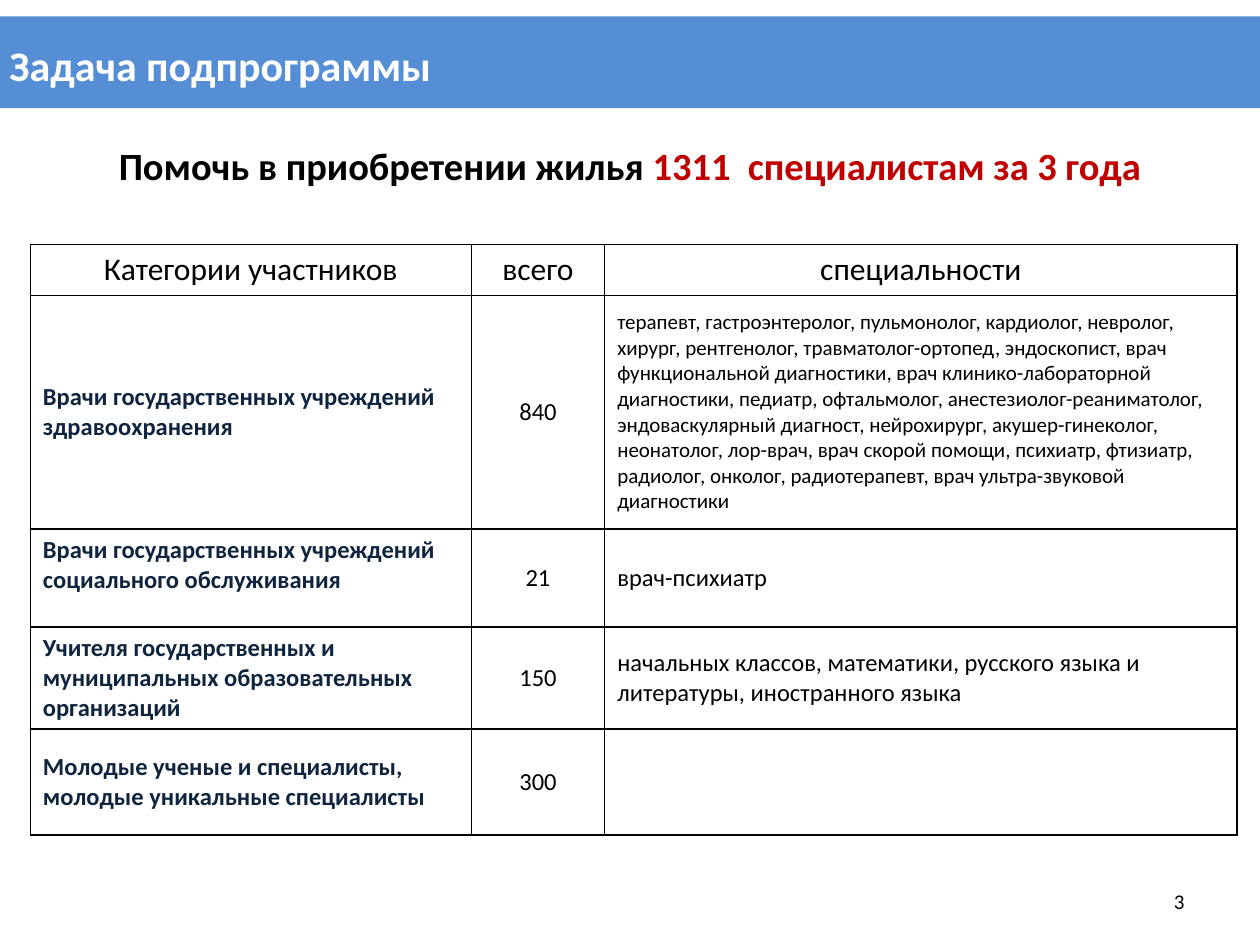
from dataclasses import dataclass

from lxml import etree
from pptx import Presentation
from pptx.dml.color import RGBColor
from pptx.enum.text import MSO_ANCHOR, MSO_AUTO_SIZE, PP_ALIGN
from pptx.oxml.ns import qn
from pptx.util import Cm, Pt

LEFT, CENTER, RIGHT = PP_ALIGN.LEFT, PP_ALIGN.CENTER, PP_ALIGN.RIGHT
TOP, MIDDLE = MSO_ANCHOR.TOP, MSO_ANCHOR.MIDDLE
NO_FIT = MSO_AUTO_SIZE.NONE
TITLE_ONLY = 5


@dataclass(frozen=True)
class Theme:
    font: str = "Calibri"
    band: str = "558ED5"
    light: str = "FFFFFF"
    text: str = "000000"
    category: str = "0F243E"
    accent: str = "C00000"
    title_size: int = 24
    goal_size: int = 22
    header_size: int = 18
    cell_size: int = 14
    small_size: int = 12
    border: int = 1


HEADERS = ("Категории участников", "всего", "специальности")
COLUMN_WIDTHS = (8.89, 2.69, 12.75)
ROW_HEIGHTS = (0.89, 4.7, 1.98, 1.85, 2.13)
DOCTOR_SPECIALTIES = (
    "терапевт, гастроэнтеролог, пульмонолог, кардиолог, невролог, хирург, "
    "рентгенолог, травматолог-ортопед, эндоскопист, врач функциональной "
    "диагностики, врач клинико-лабораторной диагностики, педиатр, офтальмолог, "
    "анестезиолог-реаниматолог, эндоваскулярный диагност, нейрохирург, "
    "акушер-гинеколог, неонатолог, лор-врач, врач скорой помощи, психиатр, "
    "фтизиатр, радиолог, онколог, радиотерапевт, врач ультра-звуковой диагностики"
)
# category, its anchor, total, specialties, whether the specialties are small
PARTICIPANTS = (
    ("Врачи государственных учреждений здравоохранения", MIDDLE, 840,
     DOCTOR_SPECIALTIES, True),
    ("Врачи государственных учреждений социального обслуживания", TOP, 21,
     "врач-психиатр", False),
    ("Учителя государственных и муниципальных образовательных организаций",
     TOP, 150, "начальных классов, математики, русского языка и литературы, "
     "иностранного языка", False),
    ("Молодые ученые и специалисты, молодые уникальные специалисты", MIDDLE,
     300, "", False),
)


class SlideBuilder:
    def __init__(self, slide, theme):
        self.s = slide
        self.theme = theme

    def add_text(self, p, text, size, color=None, bold=False):
        r = p.add_run()
        r.text = text
        values = {"name": self.theme.font, "size": Pt(size), "bold": bold}
        for name, value in values.items():
            setattr(r.font, name, value)
        r.font.color.rgb = RGBColor.from_string(color or self.theme.text)

    def title(self, text, left, top, width, height):
        sp = self.s.shapes.title
        place = {"left": left, "top": top, "width": width, "height": height}
        for name, value in place.items():
            setattr(sp, name, Cm(value))
        sp.fill.solid()
        sp.fill.fore_color.rgb = RGBColor.from_string(self.theme.band)
        tf = sp.text_frame
        frame = {"auto_size": NO_FIT, "vertical_anchor": MIDDLE,
                 "margin_left": Cm(0.19), "margin_top": Cm(0.3),
                 "margin_right": 0, "margin_bottom": 0}
        for name, value in frame.items():
            setattr(tf, name, value)
        p = tf.paragraphs[0]
        p.alignment, p.line_spacing = LEFT, 0.8
        self.add_text(p, text, self.theme.title_size, self.theme.light, True)

    def text_box(self, runs, left, top, width, height, align, anchor=TOP):
        """Add one line of text; each run is (text, size, color, bold)."""
        sp = self.s.shapes.add_textbox(Cm(left), Cm(top), Cm(width), Cm(height))
        tf = sp.text_frame
        tf.word_wrap, tf.vertical_anchor = True, anchor
        p = tf.paragraphs[0]
        p.alignment = align
        for run in runs:
            self.add_text(p, *run)

    def border(self, cell):
        tc_pr = cell._tc.get_or_add_tcPr()
        for index, side in enumerate(("a:lnL", "a:lnR", "a:lnT", "a:lnB")):
            line = etree.Element(qn(side), w=str(Pt(self.theme.border)))
            fill = etree.SubElement(line, qn("a:solidFill"))
            etree.SubElement(fill, qn("a:srgbClr"), val=self.theme.text)
            tc_pr.insert(index, line)

    def cell(self, cell, text, size, color=None, bold=False, align=LEFT,
             anchor=MIDDLE):
        cell.fill.background()
        self.border(cell)
        cell.vertical_anchor = anchor
        p = cell.text_frame.paragraphs[0]
        p.alignment = align
        if text:
            self.add_text(p, text, size, color, bold)

    def participants_table(self, left, top):
        theme = self.theme
        table = self.s.shapes.add_table(
            len(ROW_HEIGHTS), len(COLUMN_WIDTHS), Cm(left), Cm(top),
            Cm(sum(COLUMN_WIDTHS)), Cm(sum(ROW_HEIGHTS))).table
        table.first_row = table.horz_banding = False
        for column, width in zip(table.columns, COLUMN_WIDTHS):
            column.width = Cm(width)
        for row, height in zip(table.rows, ROW_HEIGHTS):
            row.height = Cm(height)
        for col, header in enumerate(HEADERS):
            self.cell(table.cell(0, col), header, theme.header_size,
                      align=CENTER, anchor=TOP)
        for row, participant in enumerate(PARTICIPANTS, start=1):
            category, anchor, total, specialties, small = participant
            self.cell(table.cell(row, 0), category, theme.cell_size,
                      theme.category, True, anchor=anchor)
            self.cell(table.cell(row, 1), str(total), theme.cell_size,
                      align=CENTER)
            self.cell(table.cell(row, 2), specialties,
                      theme.small_size if small else theme.cell_size)


def main():
    prs = Presentation()
    prs.slide_width, prs.slide_height = Cm(25.4), Cm(19.05)
    theme = Theme()
    slide = SlideBuilder(
        prs.slides.add_slide(prs.slide_layouts[TITLE_ONLY]), theme)
    slide.title("Задача подпрограммы", 0, 0.33, 25.4, 1.85)
    slide.participants_table(0.61, 4.93)
    slide.text_box(
        [("Помочь в приобретении жилья ", theme.goal_size, theme.text, True),
         ("1311  специалистам за 3 года", theme.goal_size, theme.accent, True)],
        1.4, 2.74, 22.6, 1.2, CENTER)
    slide.text_box([("3", theme.small_size)], 18.21, 17.65, 5.92, 1.02,
                   RIGHT, MIDDLE)
    prs.save("out.pptx")


if __name__ == "__main__":
    main()
